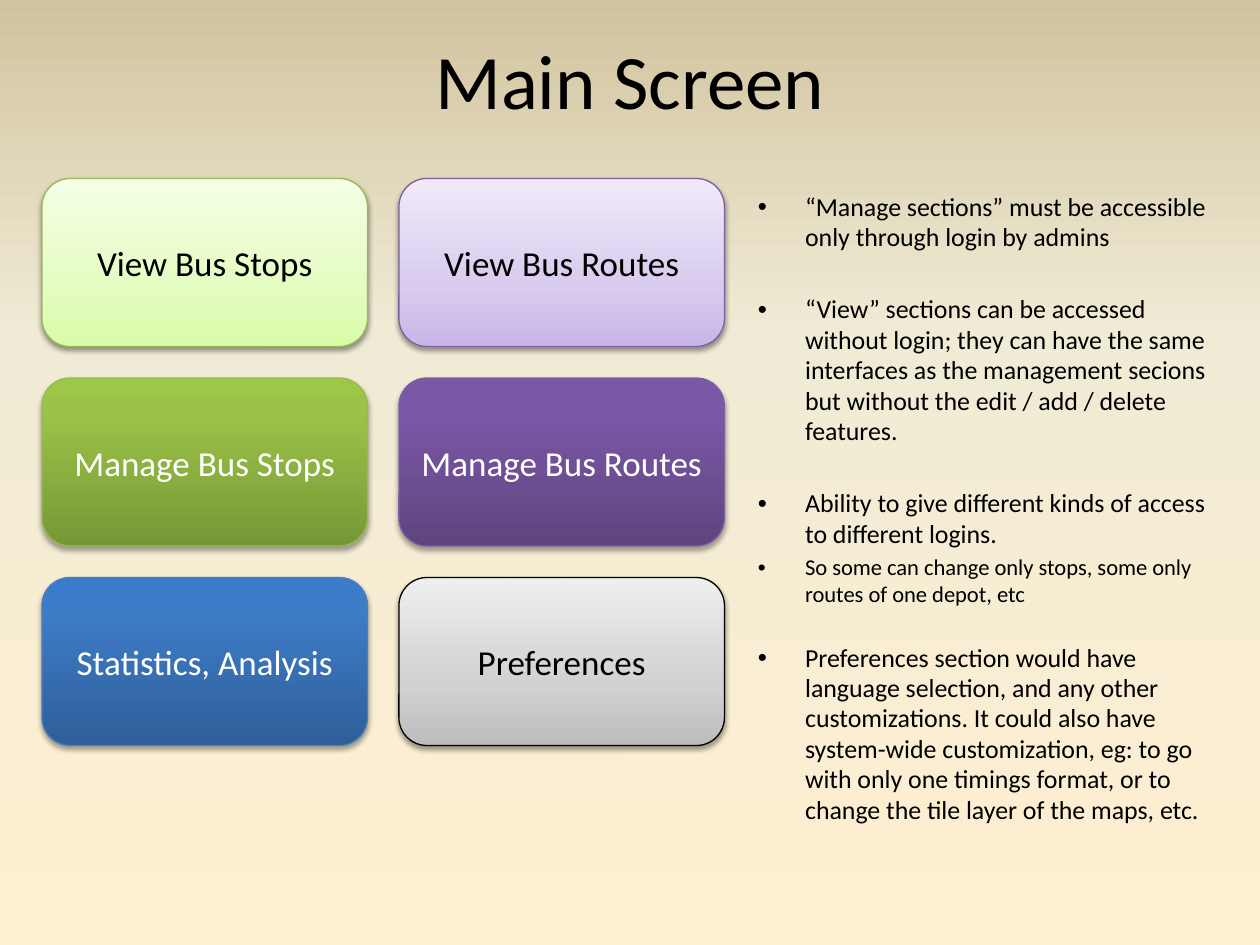
"""Build the main screen slide: a grid of menu buttons beside a list of notes."""
from lxml.etree import SubElement
from pptx import Presentation
from pptx.dml.color import RGBColor
from pptx.enum.shapes import MSO_SHAPE as Shape
from pptx.enum.text import MSO_ANCHOR as Anchor, PP_ALIGN as Align
from pptx.oxml.ns import qn
from pptx.util import Pt

TITLE = "Main Screen"
FONT = "Calibri"
COLOURS = {
    "black": "000000", "white": "FFFFFF",
    "green": "98B955", "purple": "7D60A0", "blue": "4B7EBC",
}
LIGHT, DARK = (0, 35, 100), (0, 80, 100)
SAND = list(zip((0, 65, 100), ("FFEFD1", "F0EBD5", "D1C39F")))
BUTTONS = [
    ("View Bus Stops", "green", LIGHT, ("DAFDA7", "E4FCC2", "F5FFE7")),
    ("View Bus Routes", "purple", LIGHT, ("C9B5E8", "D8CBEE", "F0EAF9")),
    ("Manage Bus Stops", "green", DARK, ("779737", "9BC348", "9DC746")),
    ("Manage Bus Routes", "purple", DARK, ("5F4480", "7B58A6", "7C57A8")),
    ("Statistics, Analysis", "blue", DARK, ("2F5F99", "3D7CC7", "3A7CCB")),
    ("Preferences", "black", LIGHT, ("BDBDBD", "D1D1D1", "EEEEEE")),
]
NOTES = [
    ("“Manage sections” must be accessible only through login by admins", 14.8, 0),
    ("“View” sections can be accessed without login; they can have the same "
     "interfaces as the management secions but without the edit / add / delete "
     "features.", 14.8, 24),
    ("Ability to give different kinds of access to different logins.", 14.8, 24),
    ("So some can change only stops, some only routes of one depot, etc", 12.9, 3),
    ("Preferences section would have language selection, and any other "
     "customizations. It could also have system-wide customization, eg: to go "
     "with only one timings format, or to change the tile layer of the maps, etc.",
     14.8, 20),
]
LEFT, TOP, WIDTH, HEIGHT, GAP, COLUMNS = 24, 102, 186, 96, 18, 2


def write(para, text, size, colour="black", align=Align.LEFT):
    para.alignment = align
    span = para.add_run()
    span.text = text
    span.font.name, span.font.size = FONT, Pt(size)
    span.font.color.rgb = RGBColor.from_string(COLOURS[colour])


def paint(fill, owner, stops):
    fill.gradient()
    fill.gradient_angle = 90
    stop_list = owner.find(".//" + qn("a:gsLst"))
    stop_list.clear()
    for position, colour in stops:
        stop = SubElement(stop_list, qn("a:gs"), pos=str(position * 1000))
        SubElement(stop, qn("a:srgbClr"), val=colour)


def add_shadow(box, opacity, distance):
    box.shadow.inherit = False
    effects = box.element.spPr.find(qn("a:effectLst"))
    shadow = SubElement(effects, qn("a:outerShdw"), blurRad=str(Pt(3.1)),
                        dist=str(Pt(distance)), dir="5400000", rotWithShape="0")
    colour = SubElement(shadow, qn("a:srgbClr"), val=COLOURS["black"])
    SubElement(colour, qn("a:alpha"), val=str(opacity * 1000))


def add_button(page, index, text, edge, positions, shades):
    row, column = divmod(index, COLUMNS)
    box = page.shapes.add_shape(
        Shape.ROUNDED_RECTANGLE, Pt(LEFT + column * (WIDTH + GAP)),
        Pt(TOP + row * (HEIGHT + GAP)), Pt(WIDTH), Pt(HEIGHT))
    paint(box.fill, box.element, zip(positions, shades))
    box.line.color.rgb = RGBColor.from_string(COLOURS[edge])
    box.line.width = Pt(0.75)
    is_dark = positions == DARK
    add_shadow(box, *((35, 1.8) if is_dark else (38, 1.6)))
    box.text_frame.vertical_anchor = Anchor.MIDDLE
    write(box.text_frame.paragraphs[0], text, 20,
          colour="white" if is_dark else "black", align=Align.CENTER)


def add_notes(page):
    frame = page.shapes.add_textbox(Pt(426), Pt(106), Pt(282), Pt(398)).text_frame
    frame.word_wrap = True
    for index, (text, size, before) in enumerate(NOTES):
        para = frame.add_paragraph() if index else frame.paragraphs[0]
        write(para, text, size)
        para.space_before, para.line_spacing = Pt(before), 0.98
        props = para._p.get_or_add_pPr()
        props.set("marL", str(Pt(27)))
        props.set("indent", str(Pt(-27)))
        SubElement(props, qn("a:buFont"), typeface="Arial")
        SubElement(props, qn("a:buChar"), char="•")


def main():
    deck = Presentation()
    deck.slide_width, deck.slide_height = Pt(720), Pt(540)
    page = deck.slides.add_slide(deck.slide_layouts[5])
    paint(page.background.fill, page.element, SAND)
    title = page.shapes.title
    title.left, title.top, title.width, title.height = Pt(36), Pt(0), Pt(648), Pt(90)
    title.text_frame.vertical_anchor = Anchor.MIDDLE
    write(title.text_frame.paragraphs[0], TITLE, 44, align=Align.CENTER)
    add_notes(page)
    for index, button in enumerate(BUTTONS):
        add_button(page, index, *button)
    deck.save("out.pptx")


if __name__ == "__main__":
    main()
